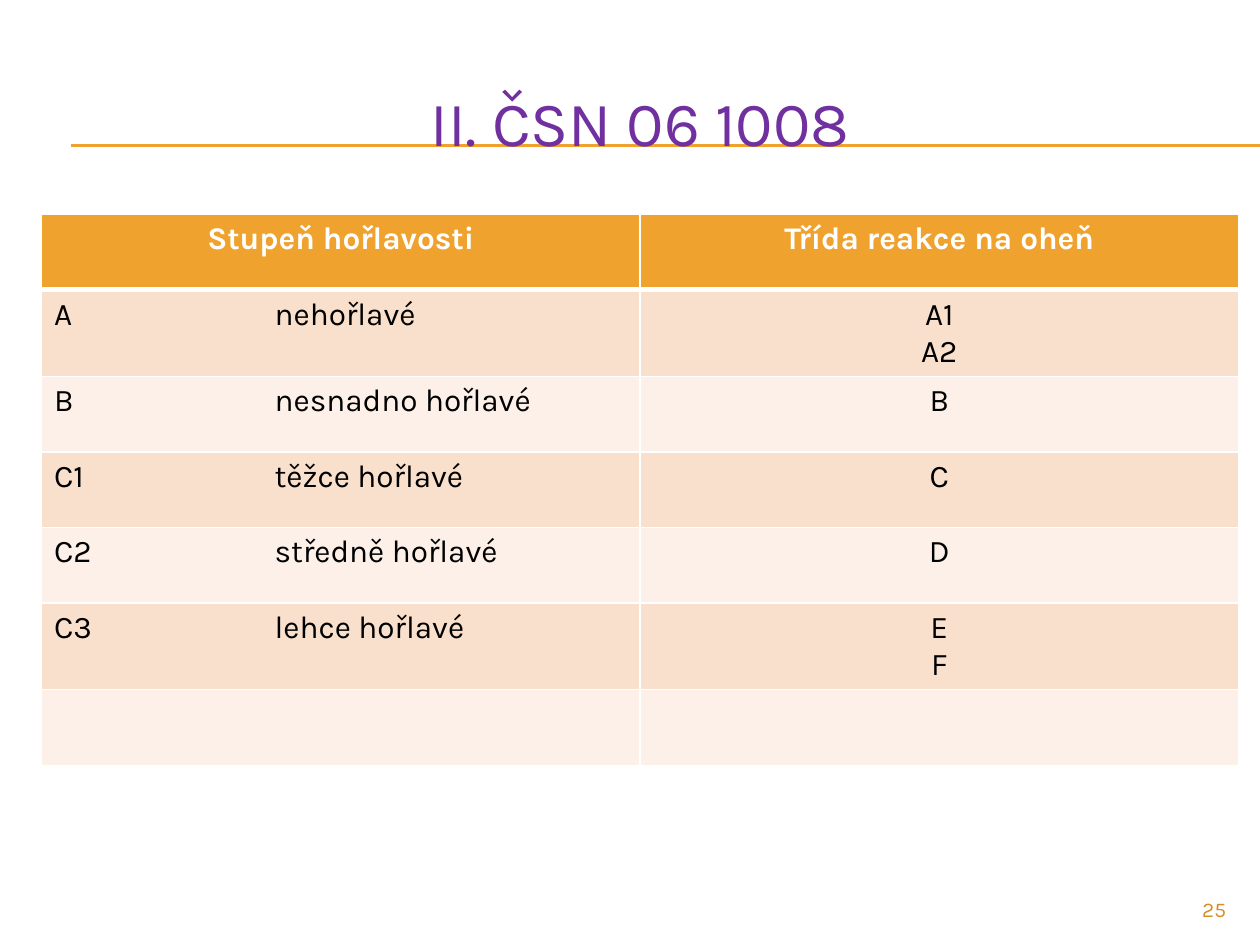
"""Build a slide with a table of flammability grades and reaction-to-fire classes."""
from lxml import etree
from pptx import Presentation
from pptx.dml.color import RGBColor
from pptx.enum.shapes import MSO_CONNECTOR
from pptx.enum.text import MSO_ANCHOR, PP_ALIGN
from pptx.oxml import parse_xml
from pptx.oxml.ns import nsdecls, qn
from pptx.util import Inches, Pt

STRAIGHT = MSO_CONNECTOR.STRAIGHT
MIDDLE = MSO_ANCHOR.MIDDLE
LEFT, CENTER, RIGHT = PP_ALIGN.LEFT, PP_ALIGN.CENTER, PP_ALIGN.RIGHT
COLORS = {
    "gold": "F0A22E", "dark": "D48F29", "purple": "7030A0", "peach": "F9E0CD",
    "cream": "FCF0E8", "white": "FFFFFF", "black": "000000",
}
ROWS = [
    ("Stupeň hořlavosti", "Třída reakce na oheň"),
    ("A\tnehořlavé", "A1\nA2"),
    ("B\tnesnadno hořlavé", "B"),
    ("C1\ttěžce hořlavé", "C"),
    ("C2\tstředně hořlavé", "D"),
    ("C3\tlehce hořlavé", "E\nF"),
    ("", ""),
]


def style(frame, size, color, align, bold=False):
    for para in frame.paragraphs:
        para.alignment = align
        para.font.name = "Karla"
        para.font.size = Pt(size)
        para.font.bold = bold
        para.font.color.rgb = RGBColor.from_string(COLORS[color])


def border(side, width):
    return parse_xml(
        f'<a:{side} {nsdecls("a")} w="{Pt(width)}"><a:solidFill>'
        f'<a:srgbClr val="{COLORS["white"]}"/></a:solidFill></a:{side}>')


deck = Presentation()
deck.slide_width, deck.slide_height = Inches(10), Inches(7.5)
slide = deck.slides.add_slide(deck.slide_layouts[5])

title = slide.shapes.title
title.left, title.top = Inches(0.33), Inches(0.5)
title.width, title.height = Inches(9.5), Inches(0.92)
title.text_frame.text = "II. ČSN 06 1008"
title.text_frame.vertical_anchor = MIDDLE
style(title.text_frame, 36, "purple", CENTER)

for y in (1.15, 1.16):
    rule = slide.shapes.add_connector(
        STRAIGHT, Inches(0.56), Inches(y), Inches(10), Inches(y))
    rule.line.color.rgb = RGBColor.from_string(COLORS["gold"])
    rule.line.width = Pt(0.75)
    etree.SubElement(rule.element.spPr, qn("a:effectLst"))
    title.element.addprevious(rule.element)

grid = slide.shapes.add_table(
    len(ROWS), 2, Inches(0.33), Inches(1.7), Inches(9.5), Inches(4.2))
table = grid.table
for r, row in enumerate(ROWS):
    table.rows[r].height = Inches(0.6)
    head = r == 0
    fill = "gold" if head else ("cream", "peach")[r % 2]
    for c, text in enumerate(row):
        cell = table.cell(r, c)
        cell.text = text
        align = CENTER if head or c == 1 else LEFT
        style(cell.text_frame, 18, "white" if head else "black", align, head)
        cell.fill.solid()
        cell.fill.fore_color.rgb = RGBColor.from_string(COLORS[fill])

for r, line in enumerate(grid.element.iter(qn("a:tr"))):
    for props in line.iter(qn("a:tcPr")):
        for i, side in enumerate(("lnL", "lnR", "lnT", "lnB")):
            thick = (r, side) in ((0, "lnB"), (1, "lnT"))
            props.insert(i, border(side, 3 if thick else 1))
    if "\t" in ROWS[r][0]:
        line.find(".//" + qn("a:pPr")).insert(0, parse_xml(
            f'<a:tabLst {nsdecls("a")}>'
            f'<a:tab pos="{Inches(1.75)}" algn="l"/></a:tabLst>'))

number = slide.shapes.add_textbox(Inches(9), Inches(7.08), Inches(0.83), Inches(0.27))
number.text_frame.word_wrap = True
number.text_frame.vertical_anchor = MIDDLE
number.text_frame.text = "25"
style(number.text_frame, 12, "dark", RIGHT)

deck.save("out.pptx")
